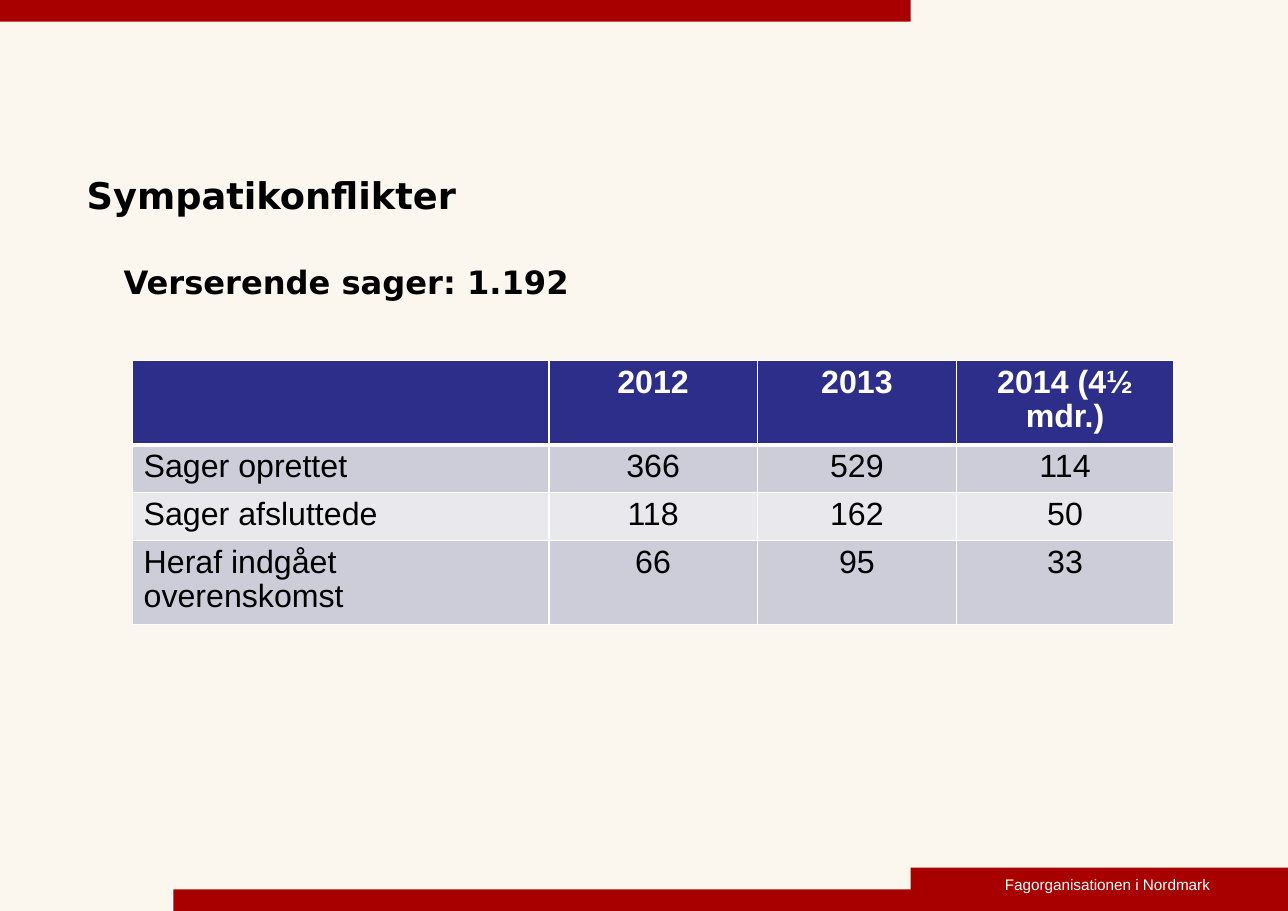
import dataclasses

import pptx
import pptx.dml.color
import pptx.enum.shapes
import pptx.enum.text
import pptx.oxml
import pptx.oxml.ns
import pptx.util

Cm, Pt = pptx.util.Cm, pptx.util.Pt
RGB = pptx.dml.color.RGBColor.from_string
ALIGN = pptx.enum.text.PP_ALIGN
ANCHOR = pptx.enum.text.MSO_ANCHOR


@dataclasses.dataclass(frozen=True)
class Theme:
    paper: str = "FBF7EF"
    red: str = "A80000"
    white: str = "FFFFFF"
    black: str = "000000"
    header: str = "2D2D8A"
    bands: tuple = ("CDCDDA", "E8E8ED")
    heading_font: str = "DejaVu Sans"
    body_font: str = "Arial"
    title_size: float = 24
    body_size: float = 21
    footer_size: float = 10


class Deck:
    """Adds styled elements to the current slide."""

    def __init__(self, prs, theme):
        self.theme = theme
        self.s = prs.slides.add_slide(prs.slide_layouts[6])

    def background(self, color):
        fill = self.s.background.fill
        fill.solid()
        fill.fore_color.rgb = RGB(color)

    def bar(self, x, y, w, h):
        kind = pptx.enum.shapes.MSO_SHAPE.RECTANGLE
        sp = self.s.shapes.add_shape(kind, Cm(x), Cm(y), Cm(w), Cm(h))
        sp.shadow.inherit = False
        sp.fill.solid()
        sp.fill.fore_color.rgb = RGB(self.theme.red)
        sp.line.fill.background()

    def style(self, p, font, size, color, bold=False):
        for r in p.runs:
            r.font.name = font
            r.font.size = Pt(size)
            r.font.bold = bold
            r.font.color.rgb = RGB(color)

    def text(self, text, x, y, w, h, font, size, color, bold=False, anchor=ANCHOR.TOP):
        tf = self.s.shapes.add_textbox(Cm(x), Cm(y), Cm(w), Cm(h)).text_frame
        tf.word_wrap = True
        tf.vertical_anchor = anchor
        tf.margin_left = tf.margin_top = tf.margin_right = tf.margin_bottom = 0
        tf.text = text
        p = tf.paragraphs[0]
        self.style(p, font, size, color, bold)
        return p

    def border(self, cell, side, width):
        ns = pptx.oxml.ns.nsdecls("a")
        cell._tc.get_or_add_tcPr().append(pptx.oxml.parse_xml(
            f'<a:ln{side} {ns} w="{Pt(width)}"><a:solidFill>'
            f'<a:srgbClr val="{self.theme.white}"/></a:solidFill></a:ln{side}>'))

    def cell(self, cell, text, row, col):
        t = self.theme
        head = row == 0
        for side in "LRTB":
            under_header = (row, side) in ((0, "B"), (1, "T"))
            self.border(cell, side, 3 if under_header else 1)
        cell.fill.solid()
        cell.fill.fore_color.rgb = RGB(t.header if head else t.bands[(row - 1) % 2])
        cell.text_frame.text = text
        p = cell.text_frame.paragraphs[0]
        p.alignment = ALIGN.CENTER if col else ALIGN.LEFT
        p.line_spacing = 0.95
        self.style(p, t.body_font, t.body_size, t.white if head else t.black, head)

    def table(self, rows, x, y, widths, heights):
        tbl = self.s.shapes.add_table(
            len(rows), len(widths), Cm(x), Cm(y), Cm(sum(widths)), Cm(sum(heights))).table
        for column, width in zip(tbl.columns, widths):
            column.width = Cm(width)
        for i, (values, height) in enumerate(zip(rows, heights)):
            tbl.rows[i].height = Cm(height)
            for j, value in enumerate(values):
                self.cell(tbl.cell(i, j), value, i, j)


def main():
    prs = pptx.Presentation()
    prs.slide_width, prs.slide_height = Cm(29.7), Cm(21)
    t = Theme()
    deck = Deck(prs, t)

    deck.background(t.paper)
    deck.bar(0, 0, 21, 0.5)
    deck.bar(4, 20.5, 25.7, 0.5)
    deck.bar(21, 20, 8.7, 1)
    deck.text("Fagorganisationen i Nordmark", 23.17, 20.17, 5.6, 0.43,
              t.body_font, t.footer_size, t.white)

    deck.text("Sympatikonflikter", 2, 3, 26, 2,
              t.heading_font, t.title_size, t.black, True, ANCHOR.BOTTOM)
    p = deck.text("Verserende sager: 1.192", 2.85, 6.1, 24, 1.8,
                  t.heading_font, t.body_size, t.black, True)
    p.line_spacing = Pt(24)
    p.space_before = Pt(4)

    deck.table(
        [("", "2012", "2013", "2014 (4½ mdr.)"),
         ("Sager oprettet", "366", "529", "114"),
         ("Sager afsluttede", "118", "162", "50"),
         ("Heraf indgået overenskomst", "66", "95", "33")],
        3.06, 8.31, (9.6, 4.8, 4.6, 5), (1.9, 1.08, 1.08, 1.9))

    prs.save("out.pptx")


if __name__ == "__main__":
    main()
